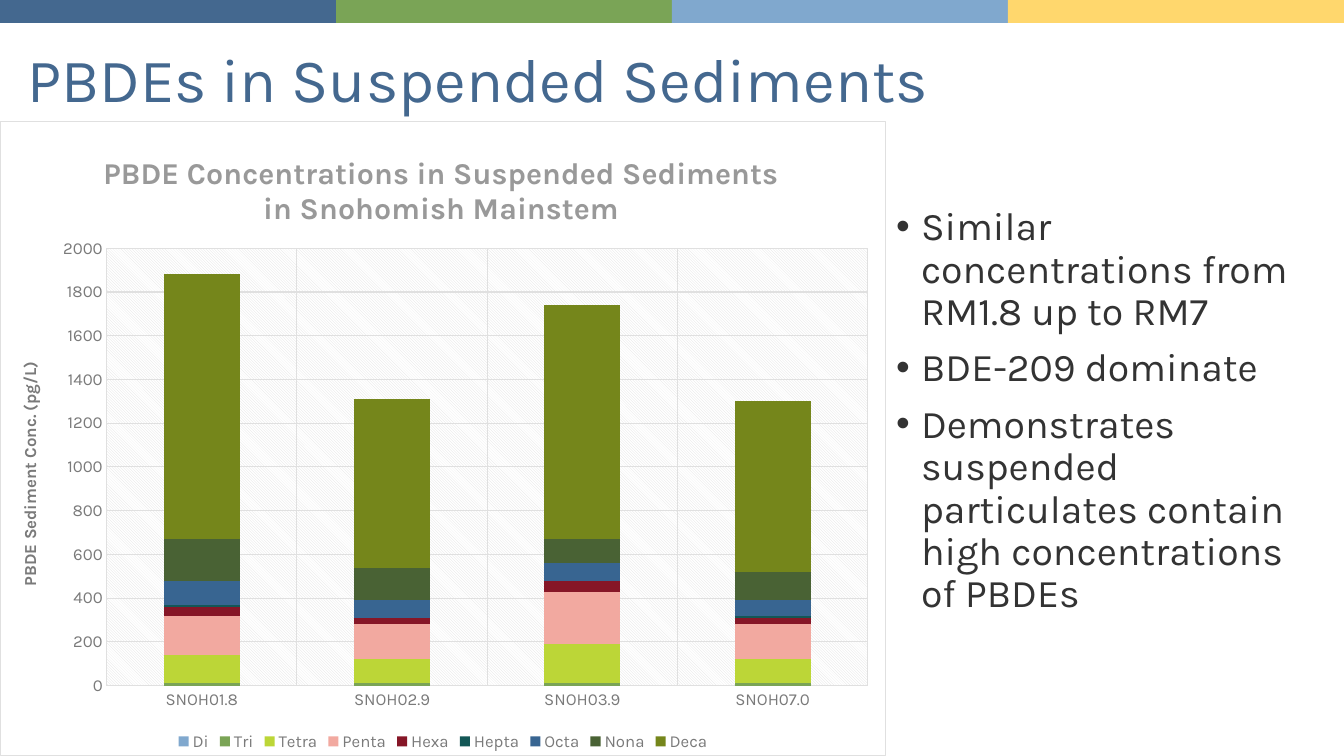
from dataclasses import dataclass

from lxml.etree import SubElement
from pptx import Presentation
from pptx.chart.data import CategoryChartData
from pptx.dml.color import RGBColor
from pptx.enum.chart import XL_CHART_TYPE, XL_LEGEND_POSITION, XL_TICK_MARK
from pptx.enum.shapes import MSO_SHAPE
from pptx.enum.text import MSO_ANCHOR, MSO_AUTO_SIZE, PP_ALIGN
from pptx.oxml import parse_xml
from pptx.oxml.ns import nsdecls, qn
from pptx.util import Emu, Pt

WIDTH, HEIGHT = 1344, 756
EMU_PER_PX = 12192000 / WIDTH
FONT = "Karla"
COLORS = {
    "blue": "44688F", "green": "7AA456", "sky": "80A8CE", "yellow": "FFD76D",
    "text": "333333", "axis": "7A7A7A", "heading": "999999",
    "grid": "E0E0E0", "white": "FFFFFF",
    "lime": "BCD637", "pink": "F2A9A0", "crimson": "861627", "teal": "135756",
    "steel": "386591", "forest": "496234", "olive": "75861B",
}


@dataclass
class Box:
    left: int
    top: int
    width: int
    height: int


@dataclass
class Homolog:
    name: str
    color: str
    values: tuple[int, ...]


STRIPES = ("blue", "green", "sky", "yellow")
TITLE_BOX = Box(17, 0, 1159, 121)
LIST_BOX = Box(886, 202, 448, 480)
CHART_BOX = Box(0, 121, 886, 635)
BULLETS = (
    "Similar concentrations from RM1.8 up to RM7",
    "BDE-209 dominate",
    "Demonstrates suspended particulates contain high concentrations of PBDEs",
)
SITES = ("SNOH01.8", "SNOH02.9", "SNOH03.9", "SNOH07.0")
HOMOLOGS = (
    Homolog("Di", "sky", (0, 0, 0, 0)),
    Homolog("Tri", "green", (10, 10, 10, 10)),
    Homolog("Tetra", "lime", (130, 110, 180, 110)),
    Homolog("Penta", "pink", (180, 160, 240, 160)),
    Homolog("Hexa", "crimson", (40, 30, 50, 30)),
    Homolog("Hepta", "teal", (10, 0, 0, 10)),
    Homolog("Octa", "steel", (110, 80, 80, 70)),
    Homolog("Nona", "forest", (190, 150, 110, 130)),
    Homolog("Deca", "olive", (1210, 770, 1070, 780)),
)


def px(length: int) -> Emu:
    return Emu(round(length * EMU_PER_PX))


def rgb(name: str) -> RGBColor:
    return RGBColor.from_string(COLORS[name])


def edges(box: Box) -> tuple[Emu, ...]:
    return px(box.left), px(box.top), px(box.width), px(box.height)


def set_font(font, size: float, color: str, bold: bool = False) -> None:
    font.name, font.size, font.bold = FONT, Pt(size), bold
    font.color.rgb = rgb(color)


def place(shape, box: Box, anchor: MSO_ANCHOR) -> None:
    shape.left, shape.top, shape.width, shape.height = edges(box)
    shape.text_frame.auto_size = MSO_AUTO_SIZE.NONE
    shape.text_frame.vertical_anchor = anchor


def add_stripes(slide) -> None:
    width = WIDTH // len(STRIPES)
    for index, color in enumerate(STRIPES):
        stripe = slide.shapes.add_shape(
            MSO_SHAPE.RECTANGLE, *edges(Box(index * width, 0, width, 23)))
        stripe.shadow.inherit = False
        stripe.fill.solid()
        stripe.fill.fore_color.rgb = rgb(color)
        stripe.line.fill.background()


def fill_title(title) -> None:
    place(title, TITLE_BOX, MSO_ANCHOR.BOTTOM)
    paragraph = title.text_frame.paragraphs[0]
    paragraph.text = "PBDEs in Suspended Sediments"
    paragraph.alignment = PP_ALIGN.LEFT
    paragraph.line_spacing = 0.9
    set_font(paragraph.font, 44, "blue")


def fill_list(body) -> None:
    place(body, LIST_BOX, MSO_ANCHOR.TOP)
    frame = body.text_frame
    for index, text in enumerate(BULLETS):
        paragraph = frame.add_paragraph() if index else frame.paragraphs[0]
        paragraph.text = text
        paragraph.line_spacing = 0.9
        paragraph.space_before = Pt(10 if index else 0)
        properties = paragraph._p.get_or_add_pPr()
        properties.set("marL", str(px(25)))
        properties.set("indent", str(-px(25)))
        SubElement(properties, qn("a:buFont"), typeface="Arial")
        SubElement(properties, qn("a:buChar"), char="•")
        set_font(paragraph.font, 28, "text")


def layout_xml(target: str, **fractions: float):
    """Build a manual layout in fractions of the chart area."""
    modes = "".join(f'<c:{axis}Mode val="edge"/>' for axis in "xy")
    values = "".join(f'<c:{key} val="{value}"/>' for key, value in fractions.items())
    return parse_xml(f'<c:layout {nsdecls("c")}><c:manualLayout>'
                     f'{target}{modes}{values}</c:manualLayout></c:layout>')


def set_layout(parent, index: int, layout) -> None:
    for old in parent.findall(qn("c:layout")):
        parent.remove(old)
    parent.insert(index, layout)


def area_xml(fill: str, line: str):
    return parse_xml(f'<c:spPr {nsdecls("c", "a")}>{fill}{line}</c:spPr>')


def solid(color: str) -> str:
    return f'<a:solidFill><a:srgbClr val="{COLORS[color]}"/></a:solidFill>'


def style_areas(chart) -> None:
    chart_element = chart.element.find(qn("c:chart"))
    border = f'<a:ln w="9525">{solid("grid")}</a:ln>'
    chart_element.addnext(area_xml(solid("white"), border))

    pattern = (f'<a:pattFill prst="ltDnDiag"><a:fgClr><a:srgbClr val="{COLORS["grid"]}"/></a:fgClr>'
               f'<a:bgClr><a:srgbClr val="{COLORS["white"]}"/></a:bgClr></a:pattFill>')
    plot_area = chart_element.find(qn("c:plotArea"))
    plot_area.append(area_xml(pattern, "<a:ln><a:noFill/></a:ln>"))
    set_layout(plot_area, 0, layout_xml('<c:layoutTarget val="inner"/>',
                                        x=0.12, y=0.2, w=0.86, h=0.69))
    set_layout(chart_element.find(qn("c:title")), 1, layout_xml("", x=0.11, y=0.04))


def set_heading(holder, text: str, size: float, color: str) -> None:
    paragraph = holder.text_frame.paragraphs[0]
    paragraph.text = text
    set_font(paragraph.font, size, color, bold=True)


def style_axis(axis) -> None:
    axis.major_tick_mark = axis.minor_tick_mark = XL_TICK_MARK.NONE
    axis.has_major_gridlines = True
    set_font(axis.tick_labels.font, 12, "axis")
    for line in (axis.format.line, axis.major_gridlines.format.line):
        line.color.rgb = rgb("grid")
        line.width = Pt(0.75)


def add_concentration_chart(slide) -> None:
    data = CategoryChartData()
    data.categories = SITES
    for homolog in HOMOLOGS:
        data.add_series(homolog.name, homolog.values)
    chart = slide.shapes.add_chart(
        XL_CHART_TYPE.COLUMN_STACKED, *edges(CHART_BOX), data).chart
    set_font(chart.font, 10, "text")
    set_heading(chart.chart_title,
                "PBDE Concentrations in Suspended Sediments in Snohomish Mainstem",
                21.6, "heading")

    # Columns
    plot = chart.plots[0]
    plot.gap_width, plot.overlap, plot.vary_by_categories = 150, 100, False
    for series, homolog in zip(plot.series, HOMOLOGS):
        series.format.fill.solid()
        series.format.fill.fore_color.rgb = rgb(homolog.color)

    # Axes and legend
    style_axis(chart.category_axis)
    value_axis = chart.value_axis
    style_axis(value_axis)
    value_axis.minimum_scale, value_axis.maximum_scale, value_axis.major_unit = 0, 2000, 200
    set_heading(value_axis.axis_title, "PBDE Sediment Conc. (pg/L)", 12, "axis")
    chart.has_legend = True
    chart.legend.position = XL_LEGEND_POSITION.BOTTOM
    chart.legend.include_in_layout = False
    set_font(chart.legend.font, 12, "axis")
    style_areas(chart)


def main() -> None:
    presentation = Presentation()
    presentation.slide_width, presentation.slide_height = px(WIDTH), px(HEIGHT)
    slide = presentation.slides.add_slide(presentation.slide_layouts[1])
    add_stripes(slide)
    fill_title(slide.shapes.title)
    fill_list(slide.placeholders[1])
    add_concentration_chart(slide)
    presentation.save("out.pptx")


if __name__ == "__main__":
    main()
